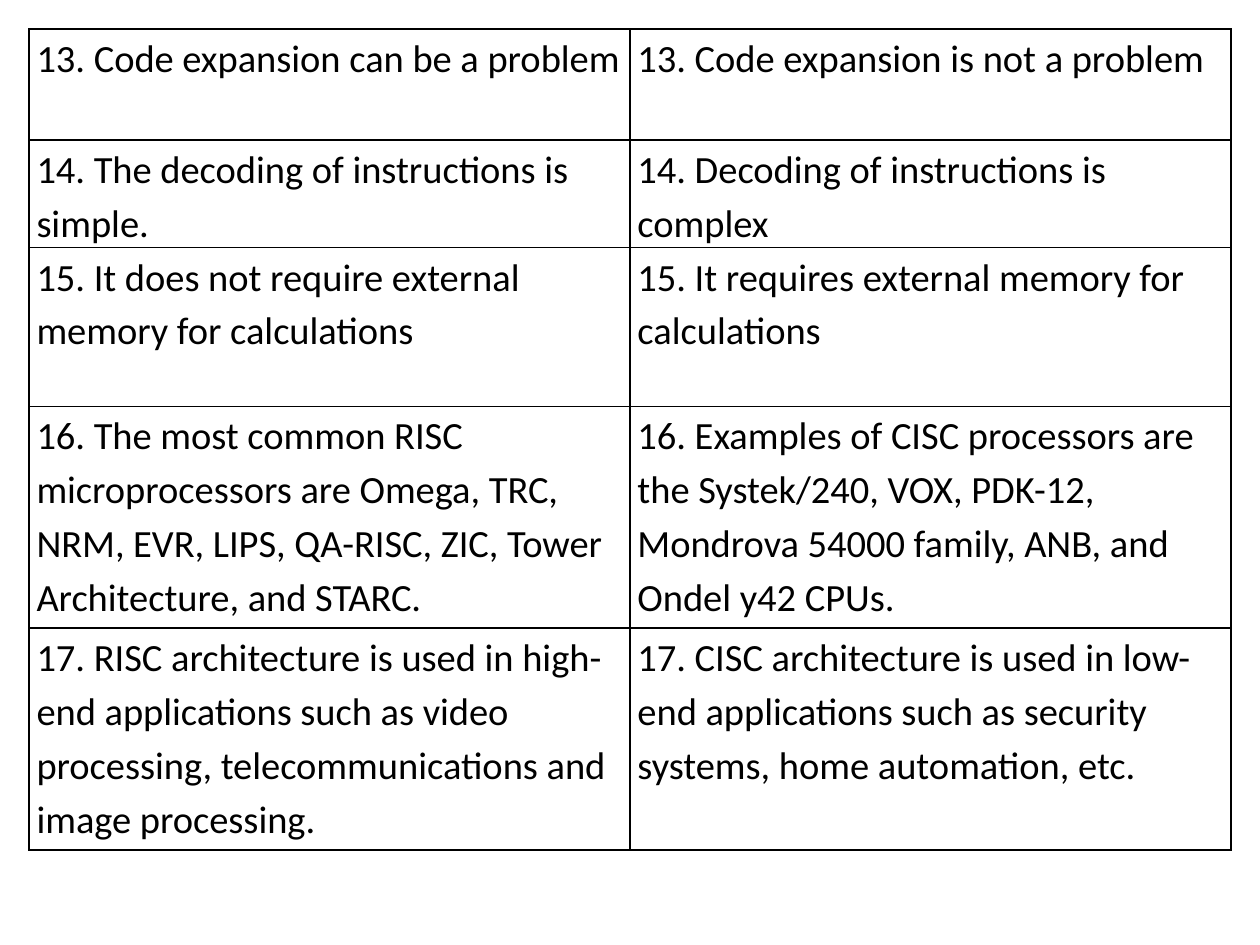
from lxml.etree import SubElement
from pptx import Presentation
from pptx.dml.color import RGBColor
from pptx.oxml.ns import qn
from pptx.util import Inches, Pt

COLORS = {"text": "000000", "border": "000000"}
FONT = {"name": "Calibri", "size": Pt(22), "bold": False}
CELL_MARGINS = {
    "margin_left": Inches(0.06),
    "margin_right": Inches(0.06),
    "margin_top": 0,
    "margin_bottom": 0,
}
TABLE_LEFT, TABLE_TOP, COLUMN_WIDTH = 0.23, 0.23, 4.77

# Row height, RISC statement, CISC statement
COMPARISON = [
    (0.88, "13. Code expansion can be a problem",
     "13. Code expansion is not a problem"),
    (0.84, "14. The decoding of instructions is simple.",
     "14. Decoding of instructions is complex"),
    (1.26, "15. It does not require external memory for calculations",
     "15. It requires external memory for calculations"),
    (1.76, "16. The most common RISC microprocessors are Omega, TRC, NRM, EVR, "
           "LIPS, QA-RISC, ZIC, Tower Architecture, and STARC.",
     "16. Examples of CISC processors are the Systek/240, VOX, PDK-12, "
     "Mondrova 54000 family, ANB, and Ondel y42 CPUs."),
    (1.76, "17. RISC architecture is used in high-end applications such as video "
           "processing, telecommunications and image processing.",
     "17. CISC architecture is used in low-end applications such as security "
     "systems, home automation, etc."),
]


def apply_format(target, values):
    for name, value in values.items():
        setattr(target, name, value)


def add_borders(cell):
    properties = cell._tc.get_or_add_tcPr()
    for position, side in enumerate(("a:lnL", "a:lnR", "a:lnT", "a:lnB")):
        line = properties.makeelement(qn(side), {"w": str(Pt(1))})
        fill = SubElement(line, qn("a:solidFill"))
        SubElement(fill, qn("a:srgbClr"), val=COLORS["border"])
        # Border lines come before the cell fill
        properties.insert(position, line)


def fill_cell(cell, text):
    apply_format(cell, CELL_MARGINS)
    cell.fill.background()
    add_borders(cell)
    para = cell.text_frame.paragraphs[0]
    para.line_spacing = 1.15
    span = para.add_run()
    span.text = text
    apply_format(span.font, FONT)
    span.font.color.rgb = RGBColor.from_string(COLORS["text"])


def add_comparison_table(page):
    total_height = sum(height for height, *_ in COMPARISON)
    table = page.shapes.add_table(
        len(COMPARISON), 2, Inches(TABLE_LEFT), Inches(TABLE_TOP),
        Inches(2 * COLUMN_WIDTH), Inches(total_height)).table
    apply_format(table, {"first_row": False, "horz_banding": False})
    for column in table.columns:
        column.width = Inches(COLUMN_WIDTH)
    for row, (height, *statements) in zip(table.rows, COMPARISON):
        row.height = Inches(height)
        for cell, statement in zip(row.cells, statements):
            fill_cell(cell, statement)


def main():
    deck = Presentation()
    deck.slide_width, deck.slide_height = Inches(10), Inches(7.5)
    # Blank layout: the table fills the page
    page = deck.slides.add_slide(deck.slide_layouts[6])
    add_comparison_table(page)
    deck.save("out.pptx")


if __name__ == "__main__":
    main()
